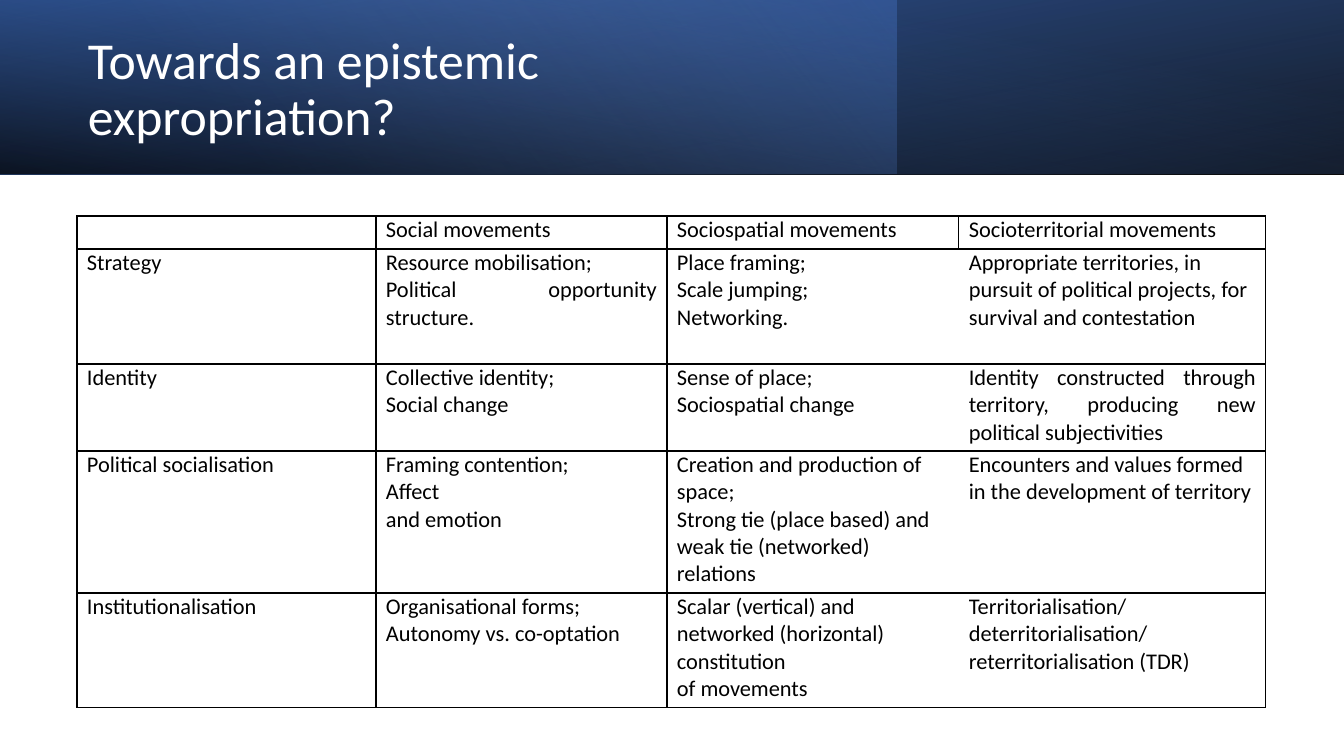
from lxml import etree
from pptx import Presentation
from pptx.dml.color import RGBColor
from pptx.enum.shapes import MSO_SHAPE
from pptx.enum.text import MSO_ANCHOR, PP_ALIGN
from pptx.oxml.ns import qn
from pptx.util import Emu, Pt

RECTANGLE = MSO_SHAPE.RECTANGLE
MIDDLE = MSO_ANCHOR.MIDDLE
LEFT, JUSTIFY = PP_ALIGN.LEFT, PP_ALIGN.JUSTIFY

THEME = {
    "font": "Calibri",
    "title_size": 37,
    "cell_size": 16,
    "title_color": "FFFFFF",
    "ink": "000000",
    "navy": "2F5597",
    "blue": "4472C4",
    "pale": "8FAADC",
    "rule": 1,
}

TITLE = "Towards an epistemic expropriation?"
TITLE_BOX = (78, 27, 778, 128)

SLIDE_SIZE = (1344, 756)
BANNER_HEIGHT = 174
BANNER = [
    {"width": 1344, "angle": 100, "flip": True, "rotation": 180,
     "stops": [(0, "ink", 96), (100, "navy", 100)]},
    {"width": 897, "angle": 140, "flip": False, "rotation": 0,
     "stops": [(0, "blue", 41), (74, "pale", 0)]},
    {"width": 1344, "angle": 260, "flip": True, "rotation": 0,
     "stops": [(0, "ink", 63), (78, "blue", 15)]},
]

TABLE_ORIGIN = (77, 216)
COLUMN_WIDTHS = [299, 291, 292, 307]
ROW_HEIGHTS = [33, 115, 87, 142, 115]
CELL_INSET = 10
MOVEMENTS = [
    [[], ["Social movements"], ["Sociospatial movements"], ["Socioterritorial movements"]],
    [["Strategy"],
     ["Resource mobilisation;", "Political opportunity structure."],
     ["Place framing;", "Scale jumping;", "Networking."],
     ["Appropriate territories, in pursuit of political projects, for survival and contestation"]],
    [["Identity"],
     ["Collective identity;", "Social change"],
     ["Sense of place;", "Sociospatial change"],
     ["Identity constructed through territory, producing new political subjectivities"]],
    [["Political socialisation"],
     ["Framing contention;", "Affect", "and emotion"],
     ["Creation and production of space;",
      "Strong tie (place based) and weak tie (networked) relations"],
     ["Encounters and values formed in the development of territory"]],
    [["Institutionalisation"],
     ["Organisational forms;", "Autonomy vs. co-optation"],
     ["Scalar (vertical) and networked (horizontal) constitution", "of movements"],
     ["Territorialisation/ deterritorialisation/ reterritorialisation (TDR)"]],
]
LEFT_ALIGNED = {(1, 3), (3, 2), (3, 3), (4, 2)}


def px(length):
    return Emu(round(length * 914400 / 100.8))


def add_color(parent, color, alpha=100):
    node = etree.SubElement(parent, qn("a:srgbClr"), val=THEME[color])
    if alpha < 100:
        etree.SubElement(node, qn("a:alpha"), val=str(alpha * 1000))


def add_text(paragraph, text, size, color):
    run = paragraph.add_run()
    run.text = text
    font_format = {"name": THEME["font"], "size": Pt(THEME[size]), "bold": False}
    for attribute, value in font_format.items():
        setattr(run.font, attribute, value)
    run.font.color.rgb = RGBColor.from_string(THEME[color])


def set_insets(target, horizontal, vertical):
    for side in ("left", "right"):
        setattr(target, f"margin_{side}", px(horizontal))
    for side in ("top", "bottom"):
        setattr(target, f"margin_{side}", px(vertical))


def add_banner_layer(slide, layer):
    band = slide.shapes.add_shape(RECTANGLE, 0, 0, px(layer["width"]), px(BANNER_HEIGHT))
    band.shadow.inherit = False
    band.line.fill.background()
    band.rotation = layer["rotation"]
    properties = band.element.spPr
    if layer["flip"]:
        properties.find(qn("a:xfrm")).set("flipH", "1")
    gradient = etree.Element(qn("a:gradFill"), rotWithShape="1")
    stops = etree.SubElement(gradient, qn("a:gsLst"))
    for position, color, alpha in layer["stops"]:
        stop = etree.SubElement(stops, qn("a:gs"), pos=str(position * 1000))
        add_color(stop, color, alpha)
    etree.SubElement(gradient, qn("a:lin"), ang=str(layer["angle"] * 60000), scaled="0")
    properties.find(qn("a:prstGeom")).addnext(gradient)


def add_title(slide):
    frame = slide.shapes.add_textbox(*map(px, TITLE_BOX)).text_frame
    frame.word_wrap = True
    frame.vertical_anchor = MIDDLE
    set_insets(frame, 10, 5)
    heading = frame.paragraphs[0]
    heading.line_spacing = 0.9
    add_text(heading, TITLE, "title_size", "title_color")


def set_borders(cell, row, column):
    last = len(COLUMN_WIDTHS) - 1
    hidden = {"L": row > 0 and column == last, "R": row > 0 and column == last - 1}
    properties = cell._tc.get_or_add_tcPr()
    for index, side in enumerate("LRTB"):
        border = etree.Element(qn(f"a:ln{side}"), w=str(Pt(THEME["rule"])))
        if hidden.get(side):
            etree.SubElement(border, qn("a:noFill"))
        else:
            add_color(etree.SubElement(border, qn("a:solidFill")), "ink")
        properties.insert(index, border)


def add_movement_table(slide):
    size = (sum(COLUMN_WIDTHS), sum(ROW_HEIGHTS))
    table = slide.shapes.add_table(
        len(ROW_HEIGHTS), len(COLUMN_WIDTHS), *map(px, TABLE_ORIGIN + size)).table
    table.first_row = False
    table.horz_banding = False
    for column, width in zip(table.columns, COLUMN_WIDTHS):
        column.width = px(width)
    for row, height in zip(table.rows, ROW_HEIGHTS):
        row.height = px(height)
    for r, entries in enumerate(MOVEMENTS):
        for c, lines in enumerate(entries):
            cell = table.cell(r, c)
            cell.fill.background()
            set_insets(cell, CELL_INSET, 0)
            set_borders(cell, r, c)
            frame = cell.text_frame
            for number, line in enumerate(lines):
                paragraph = frame.add_paragraph() if number else frame.paragraphs[0]
                paragraph.alignment = LEFT if (r, c) in LEFT_ALIGNED else JUSTIFY
                add_text(paragraph, line, "cell_size", "ink")


def main():
    deck = Presentation()
    deck.slide_width, deck.slide_height = map(px, SLIDE_SIZE)
    slide = deck.slides.add_slide(deck.slide_layouts[6])
    for layer in BANNER:
        add_banner_layer(slide, layer)
    add_title(slide)
    add_movement_table(slide)
    deck.save("out.pptx")


if __name__ == "__main__":
    main()
